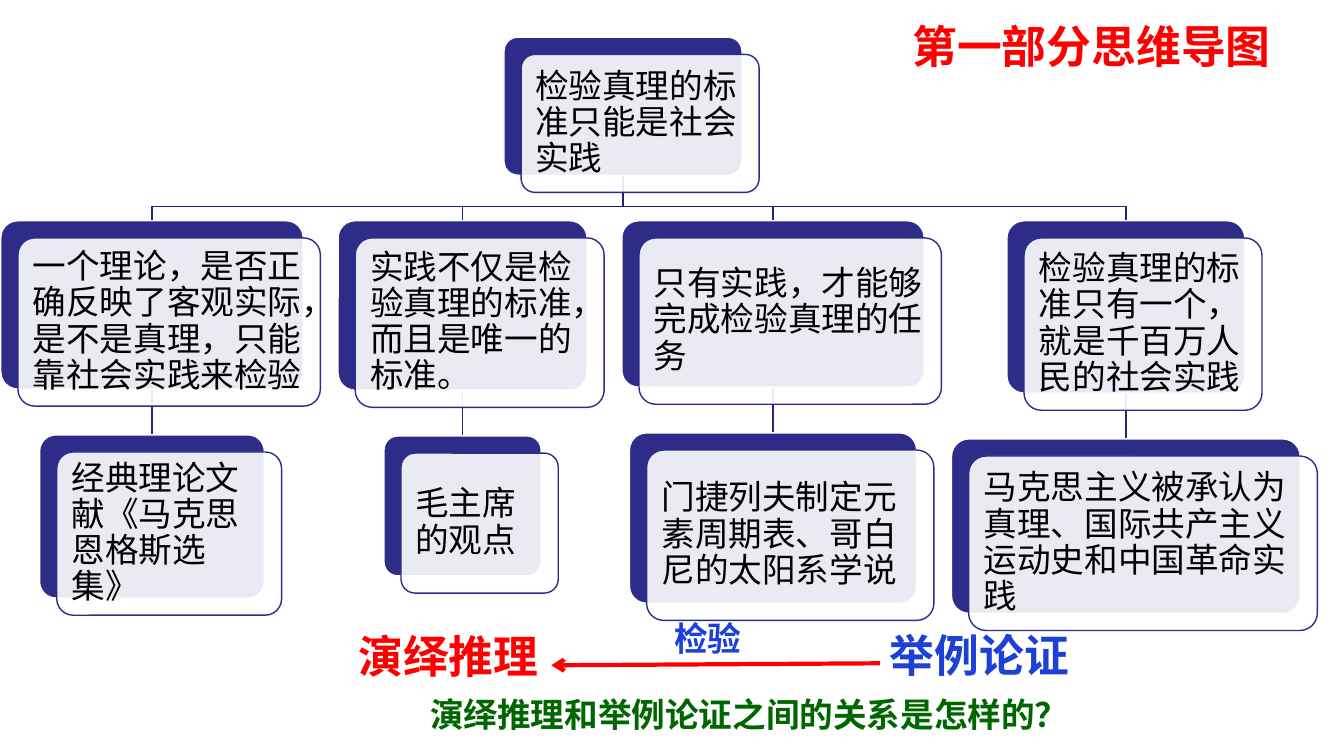
from dataclasses import dataclass
from typing import Any

import pptx
import pptx.dml.color
import pptx.enum.shapes
import pptx.enum.text
import pptx.oxml
import pptx.oxml.ns
import pptx.util

Pt = pptx.util.Pt
SHAPE = pptx.enum.shapes.MSO_SHAPE
STRAIGHT = pptx.enum.shapes.MSO_CONNECTOR.STRAIGHT
LEFT = pptx.enum.text.PP_ALIGN.LEFT
ANCHOR = pptx.enum.text.MSO_ANCHOR
GROW = pptx.enum.text.MSO_AUTO_SIZE.SHAPE_TO_FIT_TEXT

CJK = "Noto Sans CJK SC"
NAVY, ELBOW_NAVY, DROP_NAVY = "2D2D89", "24246E", "29297C"
RED, BLUE, GREEN = "FF0000", "1D41D5", "006600"
WHITE, BLACK = "FFFFFF", "000000"

LEVEL_GAP = 32.7
BEND = 22.3
CARD_OFFSET = 12.25
BRANCH_TOP = 157.7


@dataclass
class Card:
    center: float
    top: float
    width: float
    height: float
    text: str

    @property
    def bottom(self) -> float:
        return self.top + self.height


@dataclass
class Branch:
    """A claim and the evidence centred below it."""
    center: float
    claim_size: tuple[float, float]
    claim: str
    evidence_size: tuple[float, float]
    evidence: str

    def cards(self) -> tuple[Card, Card]:
        claim = Card(self.center, BRANCH_TOP, *self.claim_size, self.claim)
        evidence_top = claim.bottom + LEVEL_GAP
        return claim, Card(self.center, evidence_top, *self.evidence_size, self.evidence)


@dataclass
class Label:
    left: float
    top: float
    width: float
    height: float
    text: str
    size: float
    color: str
    font: str = CJK


ROOT = Card(445, 26.6, 170, 98.6, "检验真理的标准只能是社会实践")
BRANCHES = [
    Branch(108.6, (216, 120.2), "一个理论，是否正确反映了客观实际，是不是真理，只能靠社会实践来检验",
           (160.6, 116.6), "经典理论文献《马克思恩格斯选集》"),
    Branch(330.4, (177.8, 121), "实践不仅是检验真理的标准，而且是唯一的标准。",
           (112.3, 100), "毛主席的观点"),
    Branch(552.2, (216, 118.8), "只有实践，才能够完成检验真理的任务",
           (205.2, 121.7), "门捷列夫制定元素周期表、哥白尼的太阳系学说"),
    Branch(804.2, (170, 123.1), "检验真理的标准只有一个，就是千百万人民的社会实践",
           (249.1, 124.6), "马克思主义被承认为真理、国际共产主义运动史和中国革命实践"),
]
TITLE = Label(644.4, 9.4, 271.4, 46, "第一部分思维导图", 32, RED, "Arial")
LABELS = [
    Label(628.6, 445, 144, 46, "举例论证", 32, BLUE),
    Label(249.1, 445.7, 144, 46, "演绎推理", 32, RED),
    Label(474.5, 437.8, 63.4, 36, "检验", 24, BLUE),
    Label(300.2, 491.8, 475.2, 36, "演绎推理和举例论证之间的关系是怎样的？", 24, GREEN, "Arial"),
]


def rgb(value: str) -> pptx.dml.color.RGBColor:
    return pptx.dml.color.RGBColor.from_string(value)


def apply(target: Any, values: dict[str, Any]) -> None:
    for name, value in values.items():
        setattr(target, name, value)


def add_element(parent: Any, tag: str, **attributes: str) -> None:
    element = pptx.oxml.parse_xml(f"<a:{tag} {pptx.oxml.ns.nsdecls('a')}/>")
    for name, value in attributes.items():
        element.set(name, value)
    parent.append(element)


def set_line(line: Any, color: str, width: float) -> None:
    line.color.rgb = rgb(color)
    line.width = Pt(width)


def write(shape: Any, text: str, size: float, color: str, font: str, bold: bool,
          frame_format: dict[str, Any], paragraph_format: dict[str, Any]) -> None:
    apply(shape.text_frame, frame_format)
    paragraph = shape.text_frame.paragraphs[0]
    apply(paragraph, {"alignment": LEFT} | paragraph_format)
    run = paragraph.add_run()
    run.text = text
    apply(run.font, {"name": font, "size": Pt(size), "bold": bold})
    run.font.color.rgb = rgb(color)
    add_element(run._r.get_or_add_rPr(), "ea", typeface=CJK)


def add_panel(slide: Any, card: Card, offset: float, fill: str, outline: str) -> Any:
    panel = slide.shapes.add_shape(
        SHAPE.ROUNDED_RECTANGLE, Pt(card.center - card.width / 2 + offset),
        Pt(card.top + offset), Pt(card.width), Pt(card.height))
    panel.adjustments[0] = 0.1
    panel.shadow.inherit = False
    panel.fill.solid()
    panel.fill.fore_color.rgb = rgb(fill)
    set_line(panel.line, outline, 1)
    return panel


def add_card(slide: Any, card: Card) -> None:
    """Draw a navy panel and a translucent, offset panel holding the text."""
    add_panel(slide, card, 0, NAVY, WHITE)
    front = add_panel(slide, card, CARD_OFFSET, WHITE, NAVY)
    solid_fill = front._element.spPr.find(pptx.oxml.ns.qn("a:solidFill"))
    add_element(solid_fill[0], "alpha", val="90000")
    sides = ("margin_left", "margin_top", "margin_right", "margin_bottom")
    frame_format = dict.fromkeys(sides, Pt(7.2))
    frame_format |= {"word_wrap": True, "vertical_anchor": ANCHOR.MIDDLE}
    write(front, card.text, 24, BLACK, CJK, False, frame_format,
          {"line_spacing": 0.9, "space_after": Pt(8.4)})


def add_line(slide: Any, start: tuple[float, float], end: tuple[float, float],
             color: str, width: float) -> Any:
    line = slide.shapes.add_connector(STRAIGHT, *map(Pt, start + end))
    set_line(line.line, color, width)
    add_element(line._element.spPr, "effectLst")
    return line


def add_elbow(slide: Any, parent: Card, child: Card) -> None:
    bend = parent.bottom + BEND
    corners = [(parent.center, bend), (child.center, bend), (child.center, child.top)]
    builder = slide.shapes.build_freeform(Pt(parent.center), Pt(parent.bottom))
    builder.add_line_segments([(Pt(x), Pt(y)) for x, y in corners], close=False)
    elbow = builder.convert_to_shape()
    elbow.shadow.inherit = False
    elbow.fill.background()
    set_line(elbow.line, ELBOW_NAVY, 1)


def fill_label(shape: Any, label: Label) -> None:
    apply(shape, {name: Pt(getattr(label, name))
                  for name in ("left", "top", "width", "height")})
    write(shape, label.text, label.size, label.color, label.font, True,
          {"word_wrap": False, "auto_size": GROW, "vertical_anchor": ANCHOR.TOP}, {})


def main() -> None:
    presentation = pptx.Presentation()
    apply(presentation, {"slide_width": Pt(960), "slide_height": Pt(540)})
    slide = presentation.slides.add_slide(presentation.slide_layouts[5])
    fill_label(slide.shapes.title, TITLE)

    pairs = [branch.cards() for branch in BRANCHES]
    for claim, evidence in pairs:
        add_line(slide, (claim.center, claim.bottom),
                 (evidence.center, evidence.top), DROP_NAVY, 1)
        add_elbow(slide, ROOT, claim)
    add_card(slide, ROOT)
    for pair in pairs:
        for card in pair:
            add_card(slide, card)

    for label in LABELS:
        fill_label(slide.shapes.add_textbox(0, 0, 0, 0), label)
    arrow = add_line(slide, (628.6, 473.8), (393.8, 475.2), RED, 3)
    add_element(arrow.line._get_or_add_ln(), "tailEnd", type="arrow")
    presentation.save("out.pptx")


if __name__ == "__main__":
    main()
